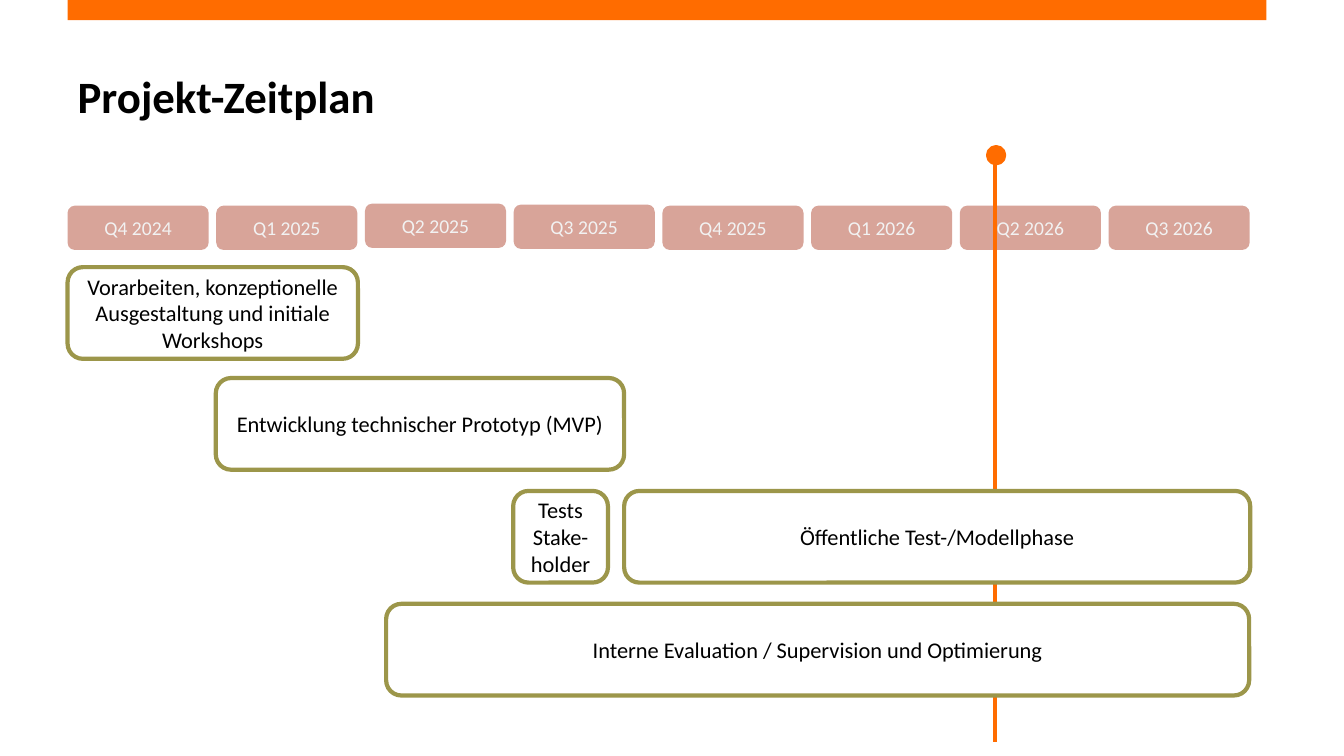
from pptx import Presentation
from pptx.dml.color import RGBColor
from pptx.enum.shapes import MSO_CONNECTOR, MSO_SHAPE
from pptx.enum.text import MSO_ANCHOR, PP_ALIGN
from pptx.oxml.ns import qn
from pptx.util import Inches, Pt
from lxml.etree import SubElement

ORANGE = RGBColor(0xFF, 0x6C, 0x00)
ROSE = RGBColor(0xD8, 0xA4, 0x99)
OLIVE = RGBColor(0x9C, 0x96, 0x4A)
LIGHT_GREY = RGBColor(0xF2, 0xF2, 0xF2)
WHITE = RGBColor(0xFF, 0xFF, 0xFF)
BLACK = RGBColor(0, 0, 0)

LEFT = 0.67
QUARTER_STEP = 1.475


def add_shape(kind, left, top, width, height, fill, line=None):
    shape = page.shapes.add_shape(
        kind, Inches(left), Inches(top), Inches(width), Inches(height))
    shape.shadow.inherit = False
    shape.fill.solid()
    shape.fill.fore_color.rgb = fill
    if line is None:
        shape.line.fill.background()
    else:
        shape.line.color.rgb = line
        shape.line.width = Pt(3)
    return shape


def write_text(shape, text, size, color, align=PP_ALIGN.CENTER, bold=False):
    frame = shape.text_frame
    frame.text = text
    frame.word_wrap = True
    frame.vertical_anchor = MSO_ANCHOR.MIDDLE
    para = frame.paragraphs[0]
    para.alignment = align
    font = para.runs[0].font
    font.name = "Calibri"
    font.size = Pt(size)
    font.bold = bold
    font.color.rgb = color


deck = Presentation()
deck.slide_width = Inches(13.33)
deck.slide_height = Inches(7.5)
page = deck.slides.add_slide(deck.slide_layouts[5])

add_shape(MSO_SHAPE.RECTANGLE, LEFT, 0, 11.89, 0.2, ORANGE)

title = page.shapes.title
title.left, title.top = Inches(LEFT), Inches(0.44)
title.width, title.height = Inches(11.89), Inches(1.02)
write_text(title, "Projekt-Zeitplan", 32, BLACK, PP_ALIGN.LEFT, bold=True)

# Quarter header
quarters = [
    ("Q4 2024", 2.04), ("Q1 2025", 2.04), ("Q2 2025", 2.02), ("Q3 2025", 2.03),
    ("Q4 2025", 2.04), ("Q1 2026", 2.04), ("Q2 2026", 2.04), ("Q3 2026", 2.04),
]
for index, (quarter, top) in enumerate(quarters):
    badge = add_shape(MSO_SHAPE.ROUNDED_RECTANGLE,
                      LEFT + index * QUARTER_STEP, top, 1.4, 0.44, ROSE)
    write_text(badge, quarter, 14, LIGHT_GREY)

# Marker for the current date, behind the phases
marker = page.shapes.add_connector(
    MSO_CONNECTOR.STRAIGHT,
    Inches(9.87), Inches(1.62), Inches(9.87), Inches(7.36))
marker.line.color.rgb = ORANGE
marker.line.width = Pt(3)
SubElement(marker.element.spPr, qn("a:effectLst"))
add_shape(MSO_SHAPE.OVAL, 9.8, 1.46, 0.16, 0.16, ORANGE, ORANGE)

# Project phases: text, left, top, width
phases = [
    ("Vorarbeiten, konzeptionelle Ausgestaltung und initiale Workshops",
     LEFT, 2.65, 2.88),
    ("Entwicklung technischer Prototyp (MVP)", 2.14, 3.75, 4.05),
    ("Tests Stake-holder", 5.09, 4.87, 0.94),
    ("Öffentliche Test-/Modellphase", 6.19, 4.87, 6.21),
    ("Interne Evaluation / Supervision und Optimierung", 3.83, 5.99, 8.56),
]
for text, left, top, width in phases:
    phase = add_shape(MSO_SHAPE.ROUNDED_RECTANGLE,
                      left, top, width, 0.91, WHITE, OLIVE)
    write_text(phase, text, 16, BLACK)

deck.save("out.pptx")
